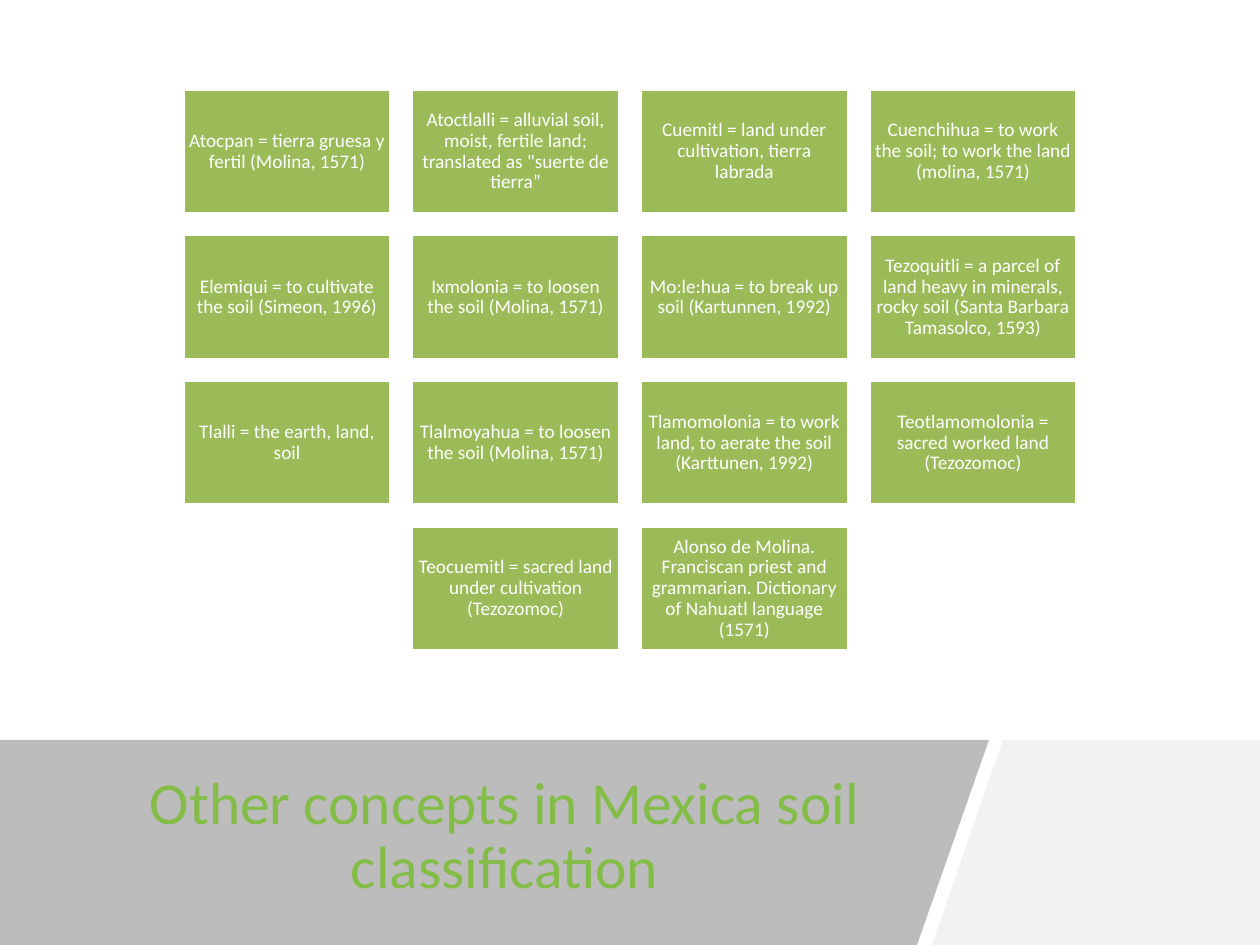
from collections import namedtuple
from dataclasses import dataclass

from lxml.etree import SubElement
from pptx import Presentation
from pptx.dml.color import RGBColor as RGB
from pptx.enum.shapes import MSO_SHAPE as Shape
from pptx.enum.text import MSO_ANCHOR as Anchor, MSO_AUTO_SIZE as AutoSize, PP_ALIGN as Align
from pptx.oxml.ns import qn
from pptx.util import Emu, Pt

PX = 914400 / 126
Box = namedtuple("Box", "x y w h")


@dataclass(frozen=True)
class Theme:
    font: str = "Calibri"
    title: str = "83BC47"
    card: str = "9BBB59"
    white: str = "FFFFFF"
    band: str = "595959"
    corner: str = "F2F2F2"
    title_size: int = 34
    card_size: int = 11


THEME = Theme()
TITLE = "Other concepts in Mexica soil classification"
ROWS = [
    ["Atocpan = tierra gruesa y fertil (Molina, 1571)",
     "Atoctlalli = alluvial soil, moist, fertile land; translated as \"suerte de tierra”",
     "Cuemitl = land under cultivation, tierra labrada",
     "Cuenchihua = to work the soil; to work the land (molina, 1571)"],
    ["Elemiqui = to cultivate the soil (Simeon, 1996)",
     "Ixmolonia = to loosen the soil (Molina, 1571)",
     "Mo:le:hua = to break up soil (Kartunnen, 1992)",
     "Tezoquitli = a parcel of land heavy in minerals, rocky soil "
     "(Santa Barbara Tamasolco, 1593)"],
    ["Tlalli = the earth, land, soil",
     "Tlalmoyahua = to loosen the soil (Molina, 1571)",
     "Tlamomolonia = to work land, to aerate the soil (Karttunen, 1992)",
     "Teotlamomolonia = sacred worked land (Tezozomoc)"],
    ["Teocuemitl = sacred land under cultivation (Tezozomoc)",
     "Alonso de Molina. Franciscan priest and grammarian. "
     "Dictionary of Nahuatl language (1571)"],
]


def px(n):
    return Emu(round(n * PX))


def set_text(sp, text, *, size, color, inset=None):
    tf = sp.text_frame
    tf.word_wrap = True
    tf.auto_size = AutoSize.NONE
    tf.vertical_anchor = Anchor.MIDDLE
    if inset is not None:
        tf.margin_left = tf.margin_right = tf.margin_top = tf.margin_bottom = px(inset)
    p = tf.paragraphs[0]
    p.alignment = Align.CENTER
    p.line_spacing = 0.9
    r = p.add_run()
    r.text = text
    r.font.name = THEME.font
    r.font.size = Pt(size)
    r.font.color.rgb = RGB.from_string(color)


def paint(sp, color, alpha=None):
    sp.shadow.inherit = False
    sp.fill.solid()
    sp.fill.fore_color.rgb = RGB.from_string(color)
    if alpha is not None:
        clr = sp.element.spPr.find(qn("a:solidFill"))[0]
        SubElement(clr, qn("a:alpha"), val=str(alpha * 1000))


def add_panel(s, box, points, color, alpha=None):
    """Borderless polygon with points relative to the box, sent to the back."""
    (x0, y0), *rest = [(box.x + x, box.y + y) for x, y in points]
    builder = s.shapes.build_freeform(x0, y0, scale=PX)
    builder.add_line_segments(rest, close=True)
    sp = builder.convert_to_shape()
    paint(sp, color, alpha)
    sp.line.fill.background()
    s.shapes.element.insert(2, sp.element)


def add_title_band(s, box):
    add_panel(s, box, [(0, 0), (989, 0), (917, box.h), (0, box.h)], THEME.band, alpha=40)
    add_panel(s, box, [(1003, 0), (box.w, 0), (box.w, box.h), (932, box.h)], THEME.corner)
    title = s.shapes.title
    title.left, title.top = px(box.x + 87), px(box.y + 22)
    title.width, title.height = px(835), px(151)
    set_text(title, TITLE, size=THEME.title_size, color=THEME.title)


def add_card(s, box, text):
    sp = s.shapes.add_shape(Shape.RECTANGLE, *map(px, box))
    paint(sp, THEME.card)
    sp.line.color.rgb = RGB.from_string(THEME.white)
    sp.line.width = Pt(2)
    set_text(sp, text, size=THEME.card_size, color=THEME.white, inset=6)


def add_card_grid(s, box, rows, card_w=208, card_h=125):
    """Spread the cards evenly over the box, with short rows centred."""
    cols = max(map(len, rows))
    step_x = (box.w - card_w) / (cols - 1)
    step_y = (box.h - card_h) / (len(rows) - 1)
    for i, row in enumerate(rows):
        first = (cols - len(row)) / 2
        for j, text in enumerate(row):
            card = Box(box.x + (first + j) * step_x, box.y + i * step_y, card_w, card_h)
            add_card(s, card, text)


def main():
    prs = Presentation()
    prs.slide_width, prs.slide_height = px(1260), px(945)
    s = prs.slides.add_slide(prs.slide_layouts[5])
    add_title_band(s, Box(0, 740, 1260, 205))
    add_card_grid(s, Box(183, 89, 894, 562), ROWS)
    prs.save("out.pptx")


if __name__ == "__main__":
    main()
